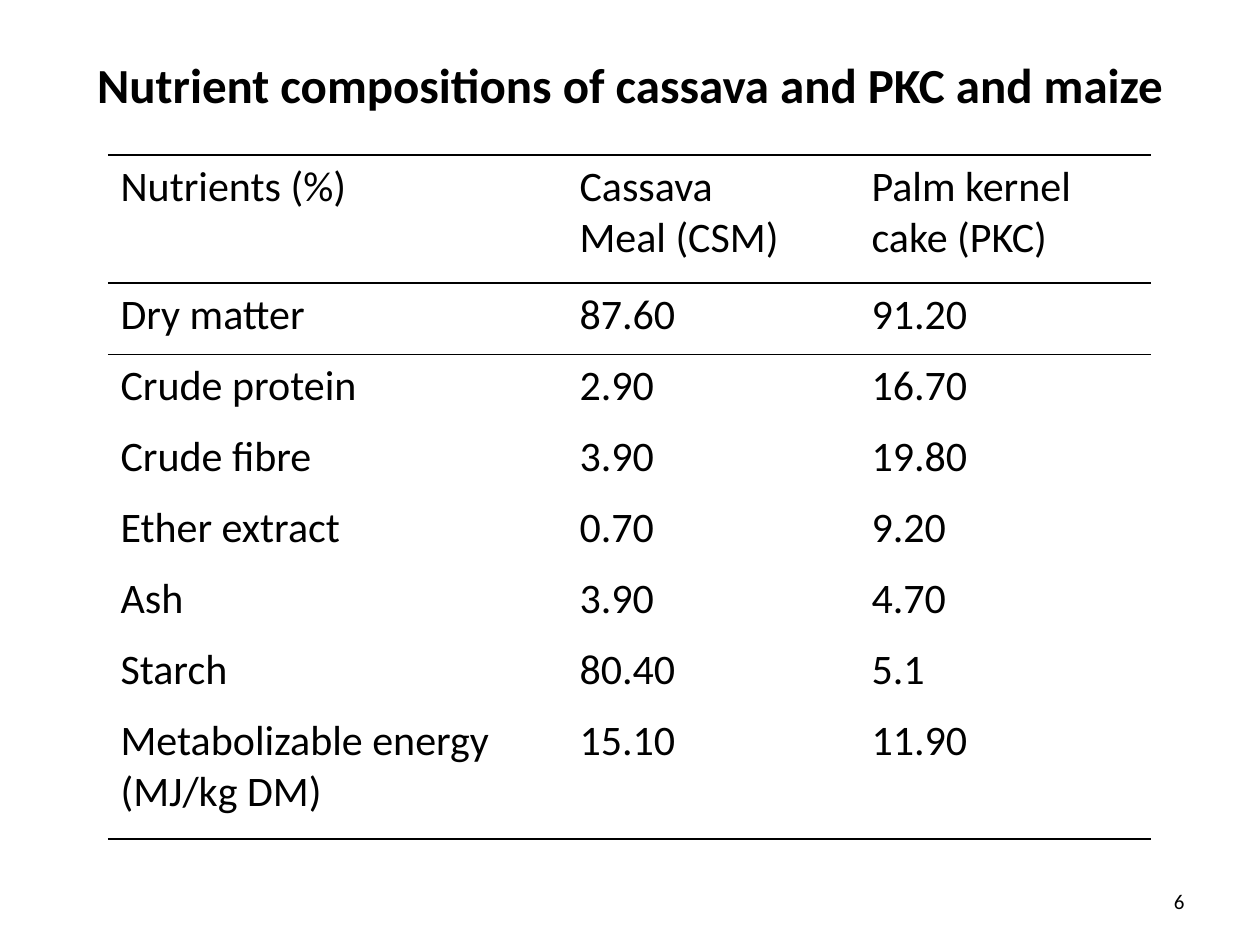
from lxml.etree import SubElement
from pptx import Presentation
from pptx.dml.color import RGBColor
from pptx.enum.text import MSO_ANCHOR as Anchor, PP_ALIGN as Align
from pptx.oxml.ns import qn
from pptx.util import Emu, Pt

PX_PER_INCH = 126
BLACK = RGBColor(0, 0, 0)
FONT = "Calibri"

COLUMN_WIDTHS = [459, 292, 292]
ROW_HEIGHTS = [128] + [71] * 6 + [130]
RULE_WIDTHS = {0: 1, 1: 1, 2: 0.5, 8: 1}
NUTRIENTS = [
    ("Nutrients (%)", "Cassava\nMeal (CSM)", "Palm kernel cake (PKC)"),
    ("Dry matter", "87.60", "91.20"),
    ("Crude protein", "2.90", "16.70"),
    ("Crude fibre", "3.90", "19.80"),
    ("Ether extract", "0.70", "9.20"),
    ("Ash", "3.90", "4.70"),
    ("Starch", "80.40", "5.1"),
    ("Metabolizable energy (MJ/kg DM)", "15.10", "11.90"),
]


def px(length):
    return Emu(round(length * 914400 / PX_PER_INCH))


def style_paragraphs(text_frame, size, align=Align.LEFT, bold=False):
    for paragraph in text_frame.paragraphs:
        paragraph.alignment = align
        paragraph.font.name = FONT
        paragraph.font.size = Pt(size)
        paragraph.font.bold = bold
        paragraph.font.color.rgb = BLACK


def add_text(slide, text, box, size, align, bold=False):
    shape = slide.shapes.add_textbox(*map(px, box))
    text_frame = shape.text_frame
    text_frame.word_wrap = True
    text_frame.vertical_anchor = Anchor.MIDDLE
    text_frame.text = text
    style_paragraphs(text_frame, size, align, bold)


def set_border(cell, side, width=None):
    properties = cell._tc.get_or_add_tcPr()
    line = SubElement(properties, qn(f"a:ln{side}"))
    if width is None:
        line.set("w", "0")
        SubElement(line, qn("a:noFill"))
    else:
        line.set("w", str(Pt(width)))
        fill = SubElement(line, qn("a:solidFill"))
        SubElement(fill, qn("a:srgbClr")).set("val", str(BLACK))


def fill_cell(cell, text, row_index):
    set_border(cell, "L")
    set_border(cell, "R")
    set_border(cell, "T", RULE_WIDTHS.get(row_index))
    set_border(cell, "B", RULE_WIDTHS.get(row_index + 1))
    cell.fill.background()
    cell.text = text
    style_paragraphs(cell.text_frame, 24)


def add_nutrient_table(slide, left, top):
    frame = slide.shapes.add_table(
        len(NUTRIENTS), len(COLUMN_WIDTHS), px(left), px(top),
        px(sum(COLUMN_WIDTHS)), px(sum(ROW_HEIGHTS)))
    table = frame.table
    table.first_row = False
    table.horz_banding = False
    for column, width in zip(table.columns, COLUMN_WIDTHS):
        column.width = px(width)
    for row_index, (row, height) in enumerate(zip(table.rows, ROW_HEIGHTS)):
        row.height = px(height)
        for cell, text in zip(row.cells, NUTRIENTS[row_index]):
            fill_cell(cell, text, row_index)


def main():
    presentation = Presentation()
    presentation.slide_width = px(1260)
    presentation.slide_height = px(945)
    slide = presentation.slides.add_slide(presentation.slide_layouts[6])
    add_text(slide, "Nutrient compositions of cassava and PKC and maize",
             (63, 38, 1134, 91), 28, Align.CENTER, bold=True)
    add_nutrient_table(slide, 108, 155)
    add_text(slide, "6", (903, 876, 294, 50), 12, Align.RIGHT)
    presentation.save("out.pptx")


if __name__ == "__main__":
    main()
